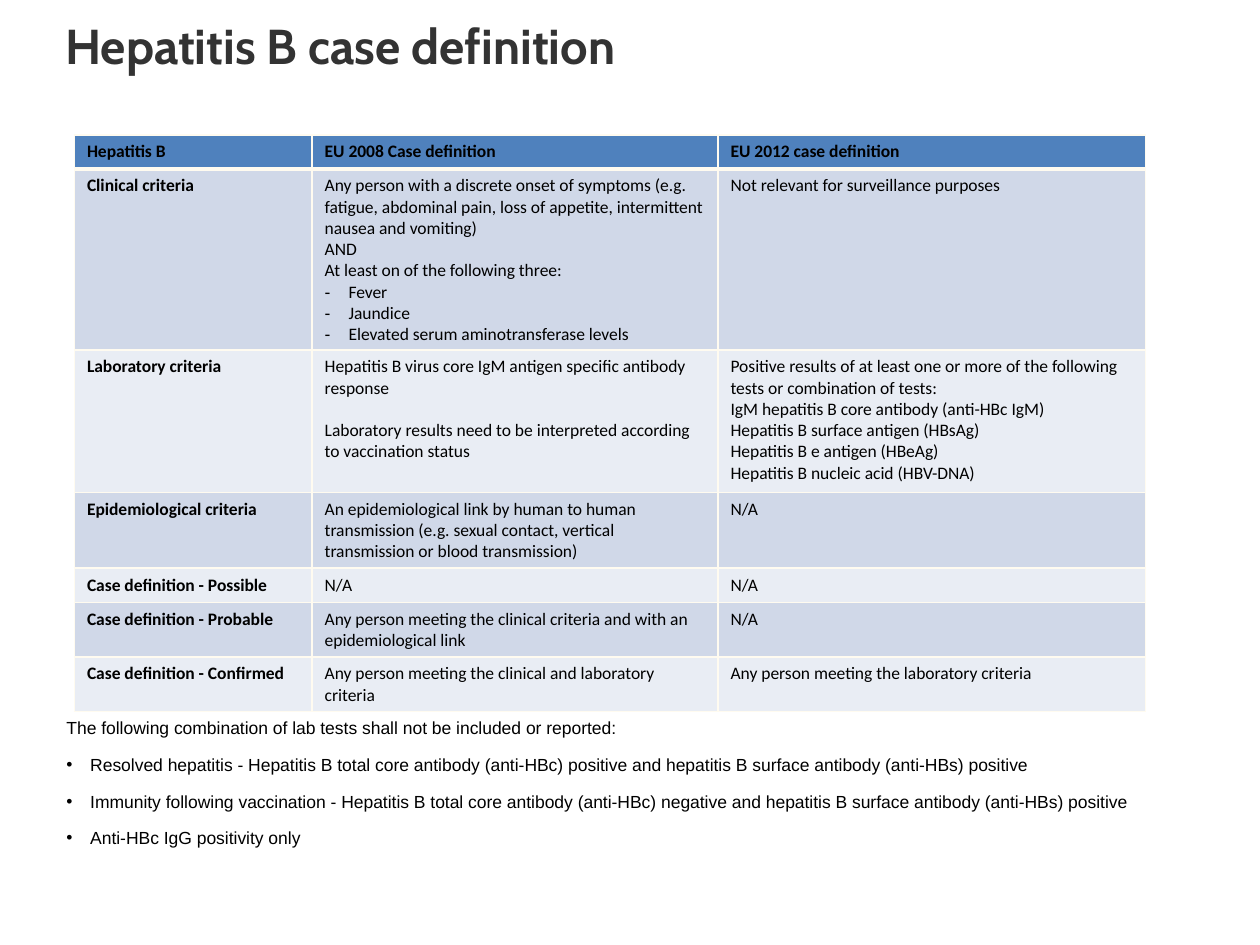
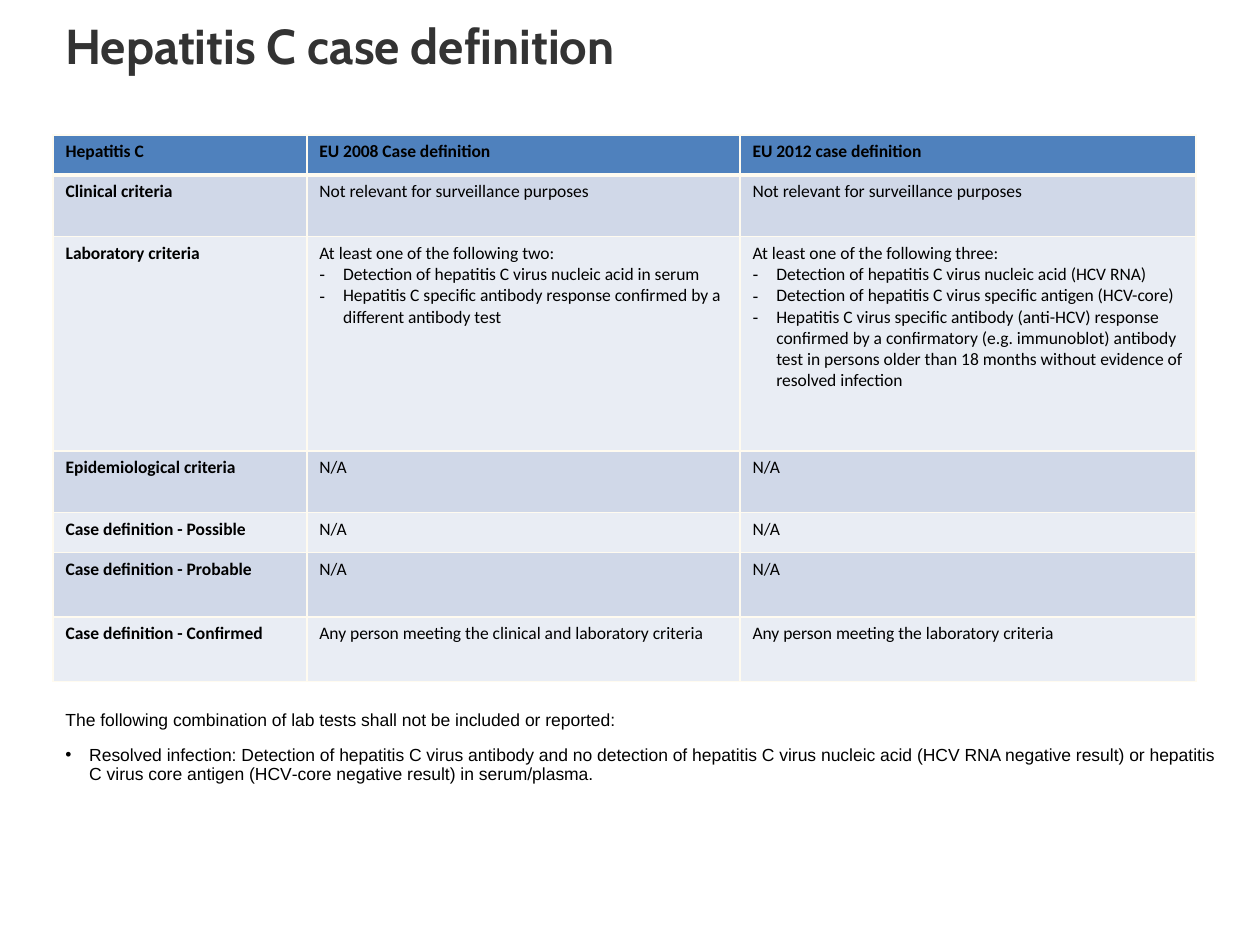
import dataclasses

import pptx
import pptx.dml.color
import pptx.oxml.ns
import pptx.util
from lxml import etree

Cm = pptx.util.Cm
Pt = pptx.util.Pt
qn = pptx.oxml.ns.qn

COLORS = {
    "paper": "FFFFFF",
    "title": "333333",
    "text": "000000",
    "header": "4F81BD",
    "odd_row": "D0D8E8",
    "even_row": "E9EDF4",
    "border": "FFFBF0",
}
TITLE_BOX = (1.07, 0.33, 21.59, 3.18)
TABLE_TOP = 2.72
COLUMN_SHARES = (0.222, 0.379, 0.399)
HANGING_INDENT = 0.48
NOTES_INTRO = "The following combination of lab tests shall not be included or reported:"
CRITERIA = ("Clinical criteria", "Laboratory criteria", "Epidemiological criteria",
            "Case definition - Possible", "Case definition - Probable",
            "Case definition - Confirmed")


@dataclasses.dataclass
class Para:
    text: str
    bullet: str = ""
    before: float = 0


def rgb(name):
    return pptx.dml.color.RGBColor.from_string(COLORS[name])


def add_bullet(paragraph, char):
    properties = paragraph._p.get_or_add_pPr()
    properties.set("marL", str(Cm(HANGING_INDENT)))
    properties.set("indent", str(-Cm(HANGING_INDENT)))
    etree.SubElement(properties, qn("a:buFont"), typeface="Arial")
    etree.SubElement(properties, qn("a:buChar"), char=char)


def write(frame, paras, font="Calibri", size=10, color="text", bold=False,
          line=None, before=0, after=0):
    """Fill a text frame with strings or Para items in one format."""
    frame.word_wrap = True
    for index, item in enumerate(paras):
        para = Para(item) if isinstance(item, str) else item
        paragraph = frame.add_paragraph() if index else frame.paragraphs[0]
        if para.bullet:
            add_bullet(paragraph, para.bullet)
        if line:
            paragraph.line_spacing = line
        paragraph.space_before = Pt(para.before or before) if index else Pt(0)
        paragraph.space_after = Pt(after)
        run = paragraph.add_run()
        run.text = para.text
        run.font.name = font
        run.font.size = Pt(size)
        run.font.bold = bold
        run.font.color.rgb = rgb(color)


def dashes(*texts):
    return [Para(text, "-") for text in texts]


def set_borders(cell, top=1, bottom=1):
    properties = cell._tc.get_or_add_tcPr()
    widths = {"a:lnL": 1, "a:lnR": 1, "a:lnT": top, "a:lnB": bottom}
    for position, (side, width) in enumerate(widths.items()):
        border = etree.Element(qn(side), w=str(Pt(width)))
        fill = etree.SubElement(border, qn("a:solidFill"))
        etree.SubElement(fill, qn("a:srgbClr"), val=COLORS["border"])
        properties.insert(position, border)


def add_title(slide, box, text):
    title = slide.shapes.add_textbox(*map(Cm, box))
    title.fill.solid()
    title.fill.fore_color.rgb = rgb("paper")
    write(title.text_frame, [text], font="Cabin", size=28, color="title",
          bold=True, line=0.9)


def add_definitions(slide, left, width, heights, disease, definitions):
    header = (disease, ["EU 2008 Case definition"], ["EU 2012 case definition"])
    rows = [header] + [(name, *pair) for name, pair in zip(CRITERIA, definitions)]
    table = slide.shapes.add_table(
        len(rows), len(header), Cm(left), Cm(TABLE_TOP), Cm(width), Cm(sum(heights))).table
    for column, share in zip(table.columns, COLUMN_SHARES):
        column.width = Cm(width * share)
    for r, (row, height) in enumerate(zip(rows, heights)):
        table.rows[r].height = Cm(height)
        band = "header" if r == 0 else ("even_row", "odd_row")[r % 2]
        for c, content in enumerate(row):
            cell = table.cell(r, c)
            cell.fill.solid()
            cell.fill.fore_color.rgb = rgb(band)
            # The rule under the header is heavier
            set_borders(cell, top=3 if r == 1 else 1, bottom=3 if r == 0 else 1)
            write(cell.text_frame, content if c else [content], bold=r == 0 or c == 0)


def add_notes(slide, box, exclusions, line=None):
    notes = slide.shapes.add_textbox(*map(Cm, box))
    paras = [NOTES_INTRO] + [Para(text, "•") for text in exclusions]
    write(notes.text_frame, paras, font="Arial", line=line, before=3, after=6)


def add_case_slide(deck, disease, table_left, table_width, heights, definitions,
                   notes_box, exclusions, notes_line=None):
    slide = deck.slides.add_slide(deck.slide_layouts[6])
    add_title(slide, TITLE_BOX, f"{disease} case definition")
    add_notes(slide, notes_box, exclusions, notes_line)
    add_definitions(slide, table_left, table_width, heights, disease, definitions)


NOT_APPLICABLE = ["N/A"]
NOT_RELEVANT = ["Not relevant for surveillance purposes"]
CONFIRMED = (["Any person meeting the clinical and laboratory criteria"],
             ["Any person meeting the laboratory criteria"])

HEPATITIS_B = [
    (["Any person with a discrete onset of symptoms (e.g. fatigue, abdominal pain, "
      "loss of appetite, intermittent nausea and vomiting)",
      "AND",
      "At least on of the following three:",
      *dashes("Fever", "Jaundice", "Elevated serum aminotransferase levels")],
     NOT_RELEVANT),
    (["Hepatitis B virus core IgM antigen specific antibody response",
      Para("Laboratory results need to be interpreted according to vaccination status",
           before=12.2)],
     ["Positive results of at least one or more of the following tests or "
      "combination of tests:",
      "IgM hepatitis B core antibody (anti-HBc IgM)",
      "Hepatitis B surface antigen (HBsAg)",
      "Hepatitis B e antigen (HBeAg)",
      "Hepatitis B nucleic acid (HBV-DNA)"]),
    (["An epidemiological link by human to human transmission (e.g. sexual contact, "
      "vertical transmission or blood transmission)"], NOT_APPLICABLE),
    (NOT_APPLICABLE, NOT_APPLICABLE),
    (["Any person meeting the clinical criteria and with an epidemiological link"],
     NOT_APPLICABLE),
    CONFIRMED,
]

HEPATITIS_C = [
    (NOT_RELEVANT, NOT_RELEVANT),
    (["At least one of the following two:",
      *dashes("Detection of hepatitis C virus nucleic acid in serum",
              "Hepatitis C specific antibody response confirmed by a different "
              "antibody test")],
     ["At least one of the following three:",
      *dashes("Detection of hepatitis C virus nucleic acid (HCV RNA)",
              "Detection of hepatitis C virus specific antigen (HCV-core)",
              "Hepatitis C virus specific antibody (anti-HCV) response confirmed by a "
              "confirmatory (e.g. immunoblot) antibody test in persons older than "
              "18 months without evidence of resolved infection")]),
    *[(NOT_APPLICABLE, NOT_APPLICABLE)] * 3,
    CONFIRMED,
]


def main():
    deck = pptx.Presentation()
    deck.slide_width, deck.slide_height = Cm(25.4), Cm(19.05)

    add_case_slide(
        deck, "Hepatitis B", 1.5, 21.59,
        (0.69, 1.04, 2.87, 1.04, 0.69, 1.09, 0.69), HEPATITIS_B,
        (1.09, 14.33, 22.4, 1.7),
        ["Resolved hepatitis ‐ Hepatitis B total core antibody (anti‐HBc) positive and "
         "hepatitis B surface antibody (anti‐HBs) positive",
         "Immunity following vaccination ‐ Hepatitis B total core antibody (anti‐HBc) "
         "negative and hepatitis B surface antibody (anti‐HBs) positive",
         "Anti‐HBc IgG positivity only"])

    add_case_slide(
        deck, "Hepatitis C", 1.07, 23.04,
        (0.81, 1.24, 4.32, 1.24, 0.81, 1.3, 1.3), HEPATITIS_C,
        (1.07, 14.22, 23.67, 4.83),
        ["Resolved infection: Detection of hepatitis C virus antibody and no detection "
         "of hepatitis C virus nucleic acid (HCV RNA negative result) or hepatitis C "
         "virus core antigen (HCV‐core negative result) in serum/plasma."],
        notes_line=0.9)

    deck.save("out.pptx")


if __name__ == "__main__":
    main()
